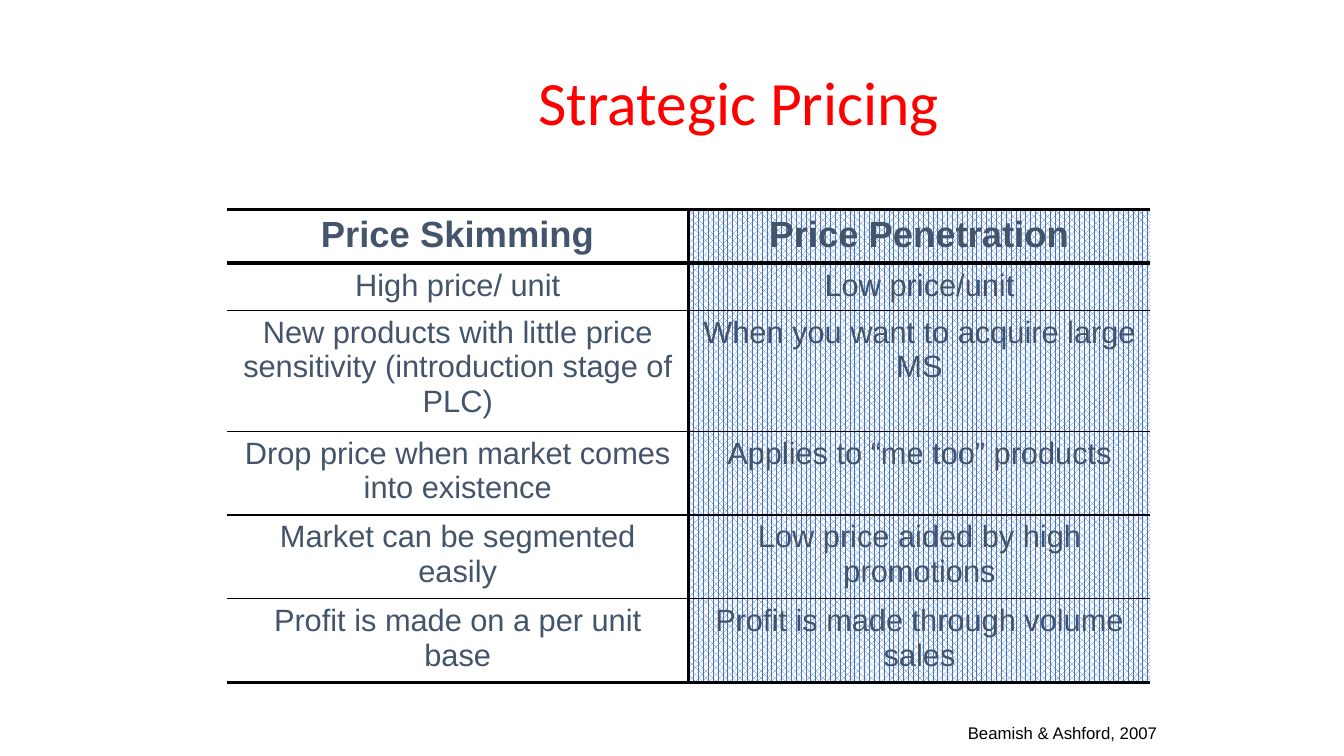
from lxml.etree import SubElement
from pptx import Presentation
from pptx.dml.color import RGBColor
from pptx.enum.dml import MSO_PATTERN
from pptx.enum.text import MSO_ANCHOR, MSO_AUTO_SIZE, PP_ALIGN
from pptx.oxml.ns import qn
from pptx.util import Emu, Pt

EMU_PER_PX = 9144
TABLE_BOX = (225, 208, 917, 470)
COLUMN_WIDTHS = (458, 458)
ROW_HEIGHTS = (53, 47, 120, 83, 83, 83)
ROW_RULES = (2.25, 3, 1, 1, 1, 1, 2.25)
COLUMN_RULES = (0, 3, 0)
PRICING_ROWS = (
    ("Price Skimming", "Price Penetration"),
    ("High price/ unit", "Low price/unit"),
    ("New products with little price sensitivity (introduction stage of PLC)",
     "When you want to acquire large MS"),
    ("Drop price when market comes into existence", "Applies to “me too” products"),
    ("Market can be segmented easily", "Low price aided by high promotions"),
    ("Profit is made on a per unit base", "Profit is made through volume sales"),
)
TITLE_FONT = {"name": "Calibri", "size": Pt(44), "bold": False}
HEADER_FONT = {"name": "Arial", "size": Pt(26), "bold": True}
BODY_FONT = {"name": "Arial", "size": Pt(22), "bold": False}
SOURCE_FONT = {"name": "Arial", "size": Pt(12), "bold": False}


def px(length):
    """Turn px into EMU."""
    return Emu(length * EMU_PER_PX)


def rgb(color):
    """Turn a hex string into a colour."""
    return RGBColor.from_string(color)


def set_attributes(target, values):
    """Set each named attribute of the target."""
    for name, value in values.items():
        setattr(target, name, value)


def write_text(frame, text, font, color, **paragraph_format):
    """Write one formatted paragraph and return it."""
    paragraph = frame.paragraphs[0]
    set_attributes(paragraph, paragraph_format)
    run = paragraph.add_run()
    run.text = text
    set_attributes(run.font, font)
    run.font.color.rgb = rgb(color)
    return paragraph


def add_border(cell, side, points):
    """Draw one black side of a cell, or none at zero points."""
    line = SubElement(cell._tc.get_or_add_tcPr(), qn(f"a:ln{side}"), w=str(Pt(points)))
    if points:
        fill = SubElement(line, qn("a:solidFill"))
        SubElement(fill, qn("a:srgbClr"), val="000000")
    else:
        SubElement(line, qn("a:noFill"))


def fill_cell(cell, patterned):
    """Give a cell the blue pattern or no fill."""
    if patterned:
        cell.fill.patterned()
        cell.fill.pattern = MSO_PATTERN.PERCENT_70
        cell.fill.fore_color.rgb = rgb("4472C4")
        cell.fill.back_color.rgb = rgb("FFFFFF")
    else:
        cell.fill.background()


def write_cell(cell, text, font):
    """Write centred cell text with a fifth of a line above it."""
    paragraph = write_text(cell.text_frame, text, font, "44546A", alignment=PP_ALIGN.CENTER)
    space = SubElement(paragraph._p.get_or_add_pPr(), qn("a:spcBef"))
    SubElement(space, qn("a:spcPct"), val="20000")


def add_title(slide, text):
    """Place the red title."""
    title = slide.shapes.title
    box = map(px, (222, 21, 1022, 167))
    set_attributes(title, dict(zip(("left", "top", "width", "height"), box)))
    title.text_frame.vertical_anchor = MSO_ANCHOR.MIDDLE
    write_text(title.text_frame, text, TITLE_FONT, "FF0000",
               alignment=PP_ALIGN.CENTER, line_spacing=0.9)


def add_pricing_table(slide):
    """Build the comparison of the two pricing strategies."""
    frame = slide.shapes.add_table(len(ROW_HEIGHTS), len(COLUMN_WIDTHS), *map(px, TABLE_BOX))
    table = frame.table
    set_attributes(table, {"first_row": False, "horz_banding": False})
    for column, width in zip(table.columns, COLUMN_WIDTHS):
        column.width = px(width)
    for row_index, (row, height) in enumerate(zip(table.rows, ROW_HEIGHTS)):
        row.height = px(height)
        font = BODY_FONT if row_index else HEADER_FONT
        for column_index, cell in enumerate(row.cells):
            write_cell(cell, PRICING_ROWS[row_index][column_index], font)
            add_border(cell, "L", COLUMN_RULES[column_index])
            add_border(cell, "R", COLUMN_RULES[column_index + 1])
            add_border(cell, "T", ROW_RULES[row_index])
            add_border(cell, "B", ROW_RULES[row_index + 1])
            fill_cell(cell, patterned=column_index == 1)


def add_source(slide, text):
    """Add the citation below the table."""
    frame = slide.shapes.add_textbox(*map(px, (950, 712, 209, 30))).text_frame
    set_attributes(frame, {"word_wrap": False, "auto_size": MSO_AUTO_SIZE.SHAPE_TO_FIT_TEXT})
    write_text(frame, text, SOURCE_FONT, "000000")


def main():
    """Build and save the slide."""
    presentation = Presentation()
    set_attributes(presentation, {"slide_width": px(1333), "slide_height": px(750)})
    slide = presentation.slides.add_slide(presentation.slide_layouts.get_by_name("Title Only"))
    add_title(slide, "Strategic Pricing")
    add_pricing_table(slide)
    add_source(slide, "Beamish & Ashford, 2007")
    presentation.save("out.pptx")


if __name__ == "__main__":
    main()
